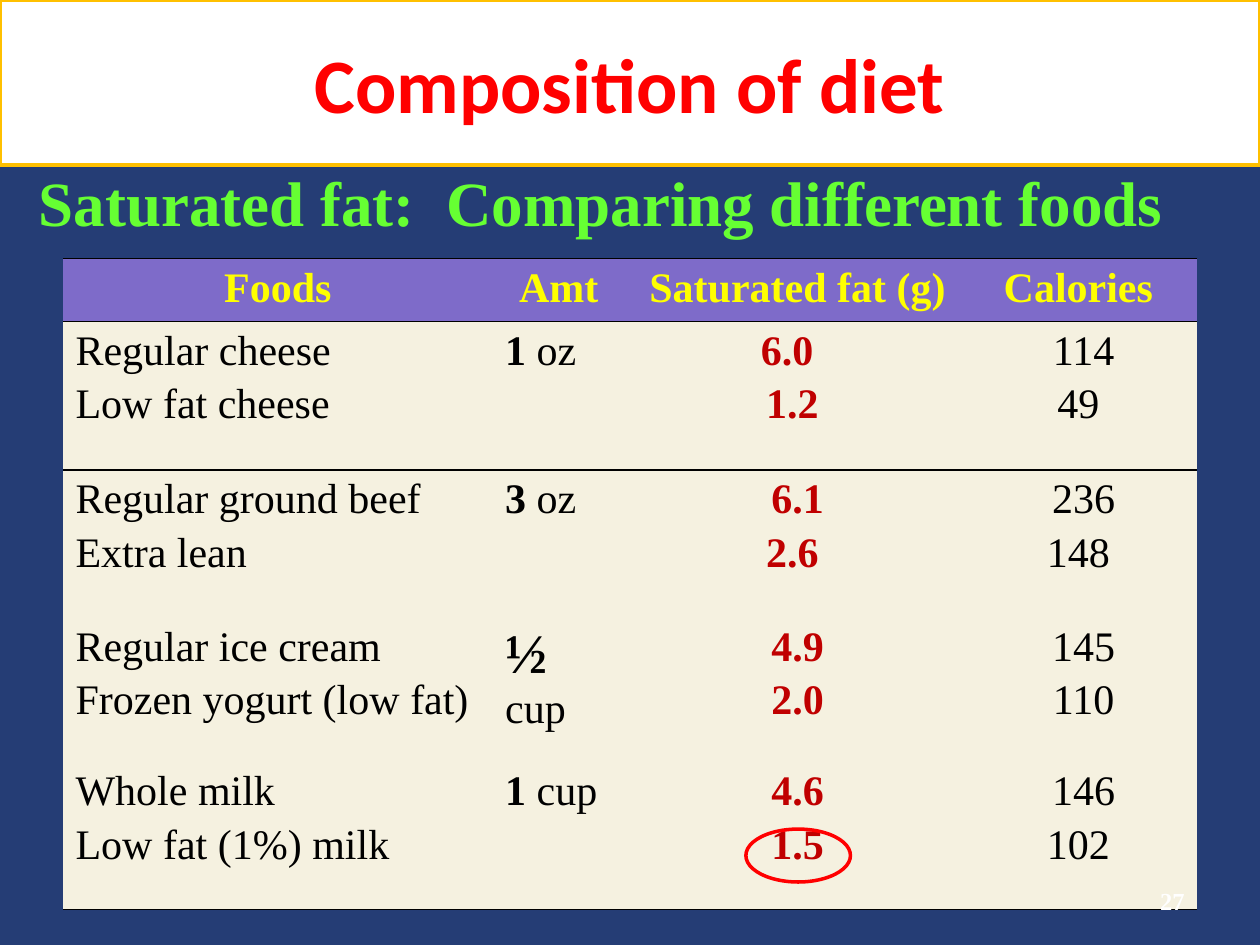
from pptx import Presentation
from pptx.dml.color import RGBColor
from pptx.enum.shapes import MSO_SHAPE as Shape
from pptx.enum.text import MSO_ANCHOR as Anchor, PP_ALIGN as Align
from pptx.oxml import parse_xml
from pptx.oxml.ns import nsdecls, qn
from pptx.util import Inches, Pt

TITLE = "Composition of diet"
SUBTITLE = "Saturated fat:  Comparing different foods "
PAGE_NUMBER = "27"
HEADERS = ["Foods", "Amt", "Saturated fat (g)", "Calories "]
FOOD_PAIRS = [
    (["Regular cheese", "Low fat cheese"], ("1", " oz"), ["6.0  ", "1.2 "], ["114", "49 "]),
    (["Regular ground beef", "Extra lean"], ("3", " oz"), ["6.1", "2.6 "], ["236", "148 "]),
    (["Regular ice cream", "Frozen yogurt (low fat)"], ("½ ", "cup"), ["4.9", "2.0"], ["145", "110"]),
    (["Whole milk", "Low fat (1%) milk"], ("1", " cup"), ["4.6", "1.5"], ["146", "102 "]),
]
COLUMN_WIDTHS = [3.41, 1.05, 2.74, 1.8]
ROW_HEIGHTS = [0.5, 1.18, 1.17, 1.15, 1.17]
NO_GRID_STYLE = "{2D5ABB26-0587-4C30-8999-92F81FD0307C}"

THEME = {
    "title_font": "Calibri", "body_font": "Times New Roman",
    "title_size": 44, "subtitle_size": 36, "fraction_size": 32,
    "table_size": 24, "number_size": 14, "line_gap": 4,
    "background": "253D75", "white": "FFFFFF", "black": "000000",
    "red": "FF0000", "gold": "FFC000", "green": "66FF33",
    "yellow": "FFFF00", "purple": "7E6BC9", "cream": "F5F1E0", "dark_red": "C00000",
}


def color(name):
    return RGBColor.from_string(THEME[name])


def format_run(run, size, color_name, bold=True, font="body_font"):
    run.font.name = THEME[font]
    run.font.size = Pt(THEME[size])
    run.font.bold = bold
    run.font.color.rgb = color(color_name)


def fill_and_outline(shape, fill, line):
    if fill:
        shape.fill.solid()
        shape.fill.fore_color.rgb = color(fill)
    else:
        shape.fill.background()
    shape.line.color.rgb = color(line)
    shape.line.width = Pt(2)
    shape.shadow.inherit = False


def place(shape, left, top, width, height):
    shape.left, shape.top = Inches(left), Inches(top)
    shape.width, shape.height = Inches(width), Inches(height)


def add_label(slide, text, box, size, color_name, align, anchor):
    frame = slide.shapes.add_textbox(*map(Inches, box)).text_frame
    frame.word_wrap = True
    frame.vertical_anchor = anchor
    frame.text = text
    frame.paragraphs[0].alignment = align
    format_run(frame.paragraphs[0].runs[0], size, color_name)


def fill_cell(cell, lines, color_name, bold, align, fill):
    cell.fill.solid()
    cell.fill.fore_color.rgb = color(fill)
    cell.text_frame.text = "\n".join(lines)
    for index, paragraph in enumerate(cell.text_frame.paragraphs):
        paragraph.alignment = align
        if index:
            paragraph.space_before = Pt(THEME["line_gap"])
        for run in paragraph.runs:
            format_run(run, "table_size", color_name, bold)


def add_borders(cell, sides):
    properties = cell._tc.get_or_add_tcPr()
    for position, side in enumerate(sides):
        properties.insert(position, parse_xml(
            f'<a:ln{side} {nsdecls("a")} w="{Pt(1)}"><a:solidFill>'
            f'<a:srgbClr val="{THEME["black"]}"/></a:solidFill></a:ln{side}>'))


def add_food_table(slide):
    frame = slide.shapes.add_table(
        len(ROW_HEIGHTS), len(COLUMN_WIDTHS), Inches(0.5), Inches(2.05),
        Inches(sum(COLUMN_WIDTHS)), Inches(sum(ROW_HEIGHTS)))
    table = frame.table
    table.horz_banding = False
    table._tbl.tblPr.find(qn("a:tableStyleId")).text = NO_GRID_STYLE
    for column, width in zip(table.columns, COLUMN_WIDTHS):
        column.width = Inches(width)
    for row, height in zip(table.rows, ROW_HEIGHTS):
        row.height = Inches(height)

    for column, header in enumerate(HEADERS):
        fill_cell(table.cell(0, column), [header], "yellow", True, Align.CENTER, "purple")
    for row, (foods, amount, fats, calories) in enumerate(FOOD_PAIRS, 1):
        fill_cell(table.cell(row, 0), foods, "black", False, Align.LEFT, "cream")
        fill_cell(table.cell(row, 1), [], "black", False, Align.LEFT, "cream")
        fill_cell(table.cell(row, 2), fats, "dark_red", True, Align.CENTER, "cream")
        fill_cell(table.cell(row, 3), calories, "black", False, Align.CENTER, "cream")
        paragraph = table.cell(row, 1).text_frame.paragraphs[0]
        for text, bold in zip(amount, (True, False)):
            run = paragraph.add_run()
            run.text = text
            size = "fraction_size" if "½" in text else "table_size"
            format_run(run, size, "black", bold)

    for row, sides in ((0, "TB"), (1, "T"), (len(FOOD_PAIRS), "B")):
        for column in range(len(HEADERS)):
            add_borders(table.cell(row, column), sides)


def add_title(slide):
    title = slide.shapes.title
    place(title, 0, 0, 10, 1.31)
    fill_and_outline(title, "white", "gold")
    title.text_frame.text = TITLE
    title.text_frame.vertical_anchor = Anchor.MIDDLE
    paragraph = title.text_frame.paragraphs[0]
    paragraph.alignment = Align.CENTER
    format_run(paragraph.runs[0], "title_size", "red", font="title_font")


def main():
    presentation = Presentation()
    presentation.slide_width, presentation.slide_height = Inches(10), Inches(7.5)
    slide = presentation.slides.add_slide(presentation.slide_layouts[5])
    slide.background.fill.solid()
    slide.background.fill.fore_color.rgb = color("background")

    add_title(slide)
    add_food_table(slide)
    add_label(slide, SUBTITLE, (-0.17, 1.25, 10, 0.71), "subtitle_size", "green",
              Align.CENTER, Anchor.TOP)
    add_label(slide, PAGE_NUMBER, (7.17, 6.95, 2.33, 0.4), "number_size", "white",
              Align.RIGHT, Anchor.MIDDLE)
    highlight = slide.shapes.add_shape(
        Shape.OVAL, Inches(5.92), Inches(6.58), Inches(0.83), Inches(0.42))
    fill_and_outline(highlight, None, "red")

    presentation.save("out.pptx")


if __name__ == "__main__":
    main()
